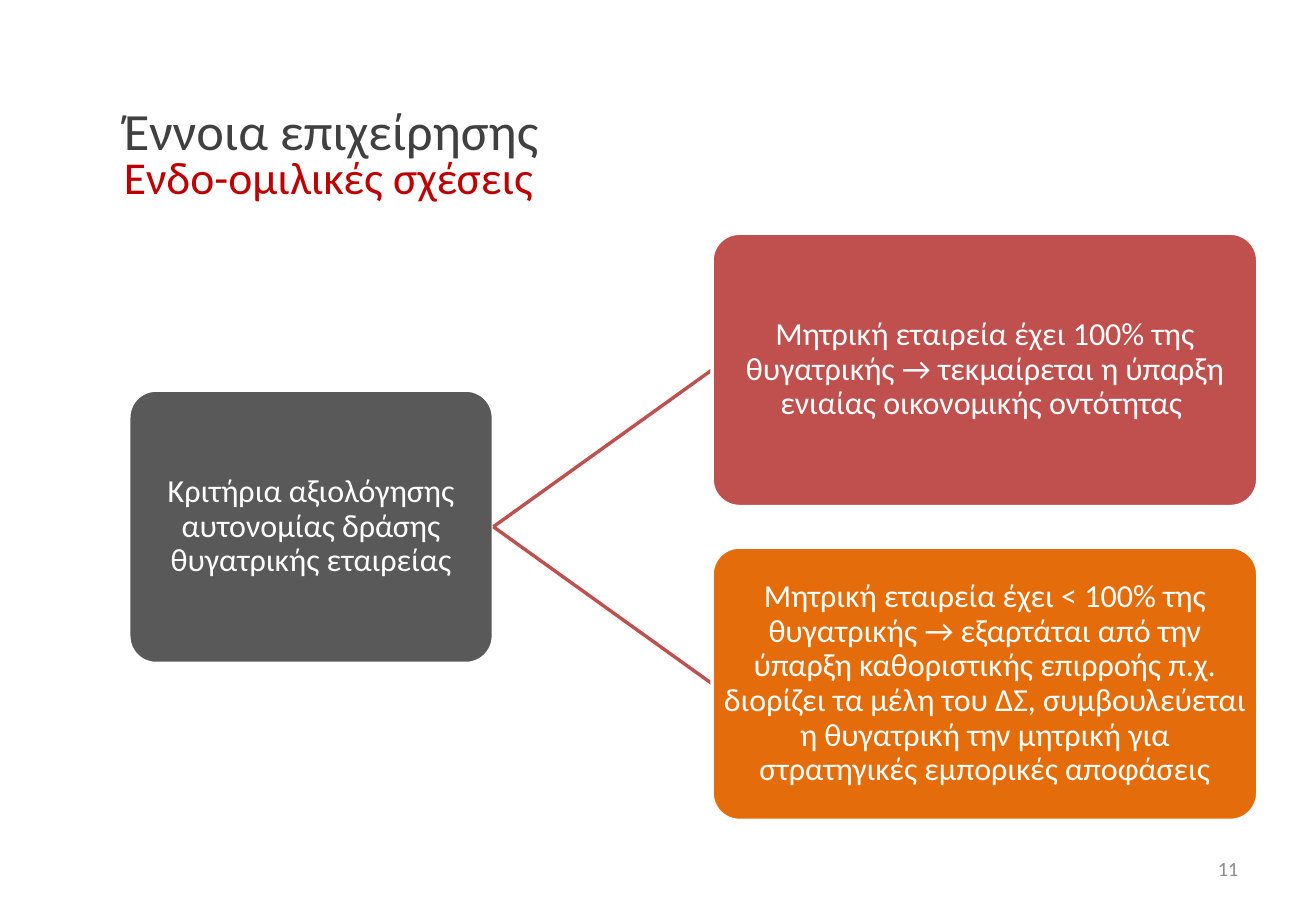
from dataclasses import dataclass
from typing import Any

from lxml.etree import SubElement
from pptx import Presentation
from pptx.dml.color import RGBColor
from pptx.enum.shapes import MSO_CONNECTOR, MSO_SHAPE
from pptx.enum.text import MSO_ANCHOR, PP_ALIGN
from pptx.oxml.ns import qn
from pptx.slide import Slide
from pptx.util import Inches, Pt

SLIDE_W, SLIDE_H = Inches(10.83), Inches(7.5)


@dataclass(frozen=True)
class Theme:
    font: str = "Calibri"
    title: str = "404040"
    subtitle: str = "C00000"
    root: str = "595959"
    red: str = "C0504D"
    orange: str = "E46C0A"
    white: str = "FFFFFF"
    number: str = "8C8C8C"
    title_pt: int = 31
    subtitle_pt: int = 27
    body_pt: int = 19
    number_pt: int = 12
    title_leading_pt: int = 25
    line_pt: int = 2


THEME = Theme()


@dataclass(frozen=True)
class Area:
    """Left, top, width and height as percentages of the slide."""

    x: float
    y: float
    w: float
    h: float

    @property
    def emu(self) -> tuple[int, int, int, int]:
        return (pct(self.x, SLIDE_W), pct(self.y, SLIDE_H),
                pct(self.w, SLIDE_W), pct(self.h, SLIDE_H))

    @property
    def mid_y(self) -> float:
        return self.y + self.h / 2


@dataclass(frozen=True)
class Node:
    text: str
    fill: str
    area: Area


@dataclass(frozen=True)
class Span:
    text: str
    size: int
    color: str


@dataclass(frozen=True)
class Label:
    area: Area
    spans: tuple[Span, ...]
    paragraph: dict[str, Any]


def pct(share: float, length: int) -> int:
    return round(share * length / 100)


def set_all(target: Any, values: dict[str, Any]) -> None:
    for name, value in values.items():
        setattr(target, name, value)


def write(sp: Any, spans: tuple[Span, ...], frame: dict[str, Any],
          paragraph: dict[str, Any]) -> None:
    tf = sp.text_frame
    set_all(tf, {"word_wrap": True, "vertical_anchor": MSO_ANCHOR.MIDDLE, **frame})
    p = tf.paragraphs[0]
    set_all(p, paragraph)
    for i, span in enumerate(spans):
        if i:
            p.add_line_break()
        r = p.add_run()
        r.text = span.text
        set_all(r.font, {"name": THEME.font, "size": Pt(span.size)})
        r.font.color.rgb = RGBColor.from_string(span.color)


def add_label(s: Slide, label: Label) -> None:
    write(s.shapes.add_textbox(*label.area.emu), label.spans, {}, label.paragraph)


def add_node(s: Slide, node: Node) -> None:
    sp = s.shapes.add_shape(MSO_SHAPE.ROUNDED_RECTANGLE, *node.area.emu)
    sp.shadow.inherit = False
    sp.adjustments[0] = 0.1
    sp.fill.solid()
    sp.fill.fore_color.rgb = RGBColor.from_string(node.fill)
    sp.line.color.rgb = RGBColor.from_string(THEME.white)
    sp.line.width = Pt(THEME.line_pt)
    sides = ("left", "top", "right", "bottom")
    write(sp, (Span(node.text, THEME.body_pt, THEME.white),),
          {f"margin_{side}": Inches(0.01) for side in sides},
          {"alignment": PP_ALIGN.CENTER, "line_spacing": 0.9})


def add_branch(s: Slide, start: Area, end: Area) -> None:
    cxn = s.shapes.add_connector(
        MSO_CONNECTOR.STRAIGHT,
        pct(start.x + start.w, SLIDE_W), pct(start.mid_y, SLIDE_H),
        pct(end.x, SLIDE_W), pct(end.mid_y, SLIDE_H))
    cxn.line.color.rgb = RGBColor.from_string(THEME.red)
    cxn.line.width = Pt(THEME.line_pt)
    SubElement(cxn._element.spPr, qn("a:effectLst"))


NODE_H = 30
CHILD_X, CHILD_W = 54.11, 41.46
CHILD_TOP, CHILD_PITCH = 25.6, 34.45

ROOT = Node("Κριτήρια αξιολόγησης αυτονομίας δράσης θυγατρικής εταιρείας", THEME.root,
            Area(9.79, CHILD_TOP + CHILD_PITCH / 2, 27.7, NODE_H))

CHILD_CONTENT = (
    ("Μητρική εταιρεία έχει 100% της θυγατρικής → τεκμαίρεται η ύπαρξη "
     "ενιαίας οικονομικής οντότητας ", THEME.red),
    ("Μητρική εταιρεία έχει < 100% της θυγατρικής → εξαρτάται από την ύπαρξη "
     "καθοριστικής επιρροής π.χ. διορίζει τα μέλη του ΔΣ, συμβουλεύεται η "
     "θυγατρική την μητρική για στρατηγικές εμπορικές αποφάσεις", THEME.orange),
)
CHILDREN = [
    Node(text, fill, Area(CHILD_X, CHILD_TOP + i * CHILD_PITCH, CHILD_W, NODE_H))
    for i, (text, fill) in enumerate(CHILD_CONTENT)
]

LABELS = (
    Label(Area(8.5, 11.33, 88.46, 12.8),
          (Span("Έννοια επιχείρησης", THEME.title_pt, THEME.title),
           Span("Ενδο-ομιλικές σχέσεις", THEME.subtitle_pt, THEME.subtitle)),
          {"line_spacing": Pt(THEME.title_leading_pt)}),
    Label(Area(71.65, 92.67, 23.36, 5.33),
          (Span("11", THEME.number_pt, THEME.number),),
          {"alignment": PP_ALIGN.RIGHT}),
)


def main() -> None:
    prs = Presentation()
    set_all(prs, {"slide_width": SLIDE_W, "slide_height": SLIDE_H})
    s = prs.slides.add_slide(prs.slide_layouts[6])
    for label in LABELS:
        add_label(s, label)
    add_node(s, ROOT)
    for child in CHILDREN:
        add_branch(s, ROOT.area, child.area)
        add_node(s, child)
    prs.save("out.pptx")


if __name__ == "__main__":
    main()
